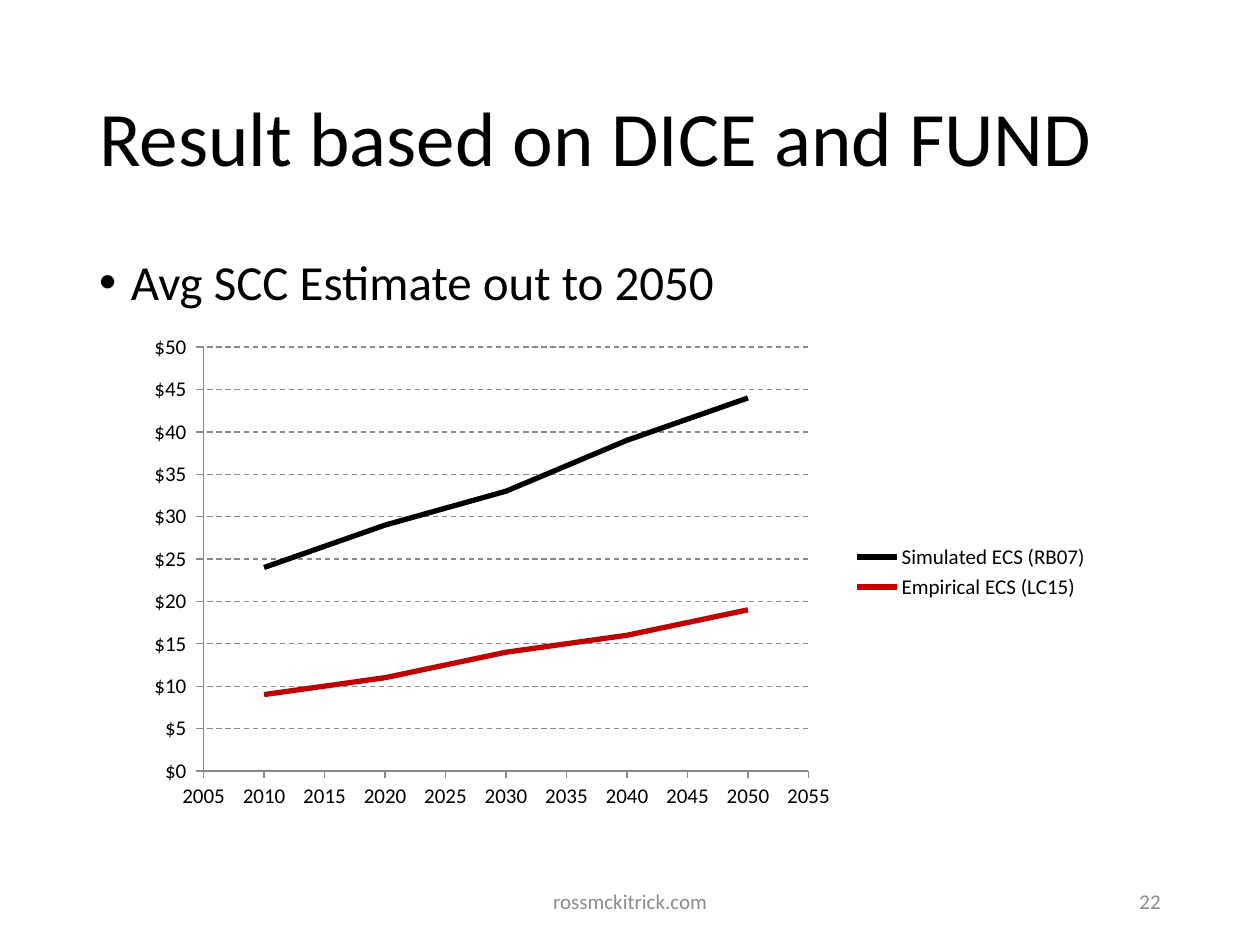
from lxml import etree
from pptx import Presentation, util as u
from pptx.chart.data import XyChartData
from pptx.dml.color import RGBColor
from pptx.enum import chart as ch, dml, text
from pptx.oxml.ns import qn

COLORS = {"text": "000000", "footer": "8C8C8C", "axis": "898989",
          "simulated": "000000", "empirical": "C00000"}
FONT = "Calibri"
TITLE = "Result based on DICE and FUND"
BULLET = "Avg SCC Estimate out to 2050"
# text, (left, top, width, height) in cm, alignment
FOOTERS = [
    ("rossmckitrick.com", (8.41, 17.65, 8.59, 1.02), text.PP_ALIGN.CENTER),
    ("22", (17.93, 17.65, 5.72, 1.02), text.PP_ALIGN.RIGHT),
]
YEARS = [2010, 2020, 2030, 2040, 2050]
SERIES = [
    ("Simulated ECS (RB07)", [24, 29, 33, 39, 44], "simulated"),
    ("Empirical ECS (LC15)", [9, 11, 14, 16, 19], "empirical"),
]
DOLLARS = '"$"#,##0_);[Red]\\("$"#,##0\\)'
TITLE_BOX = (1.75, 1.02, 21.9, 3.68)
BODY_BOX = (1.75, 5.08, 21.9, 12.09)
CHART_BOX = (2.74, 6.55, 19.48, 9.96)
PLOT_AREA = {"x": 0.07, "y": 0.045, "w": 0.626, "h": 0.858}


def lengths(box):
    return [u.Cm(value) for value in box]


def color(name):
    return RGBColor.from_string(COLORS[name])


def write(shape, content, size, fill="text", align=text.PP_ALIGN.LEFT,
          anchor=text.MSO_ANCHOR.MIDDLE, spacing=1.0):
    frame = shape.text_frame
    frame.word_wrap = True
    frame.auto_size = text.MSO_AUTO_SIZE.NONE
    frame.vertical_anchor = anchor
    paragraph = frame.paragraphs[0]
    paragraph.alignment = align
    paragraph.line_spacing = spacing
    run = paragraph.add_run()
    run.text = content
    run.font.name, run.font.size = FONT, u.Pt(size)
    run.font.color.rgb = color(fill)
    return paragraph


def add_bullet(paragraph, indent):
    properties = paragraph._p.get_or_add_pPr()
    properties.set("marL", str(indent))
    properties.set("indent", str(-indent))
    etree.SubElement(properties, qn("a:buFont")).set("typeface", "Arial")
    etree.SubElement(properties, qn("a:buChar")).set("char", "•")


def format_axis(axis, low, high, number_format):
    axis.minimum_scale, axis.maximum_scale, axis.major_unit = low, high, 5
    axis.major_tick_mark = ch.XL_TICK_MARK.OUTSIDE
    axis.minor_tick_mark = ch.XL_TICK_MARK.NONE
    axis.has_major_gridlines = False
    axis.format.line.color.rgb = color("axis")
    axis.format.line.width = u.Pt(0.75)
    labels = axis.tick_labels
    labels.number_format, labels.number_format_is_linked = number_format, False
    labels.font.size = u.Pt(12)


def place_plot_area(chart):
    """Fix the inner plot area as fractions of the chart."""
    plot_area = chart._chartSpace.chart.plotArea
    for old in plot_area.findall(qn("c:layout")):
        plot_area.remove(old)
    layout = etree.Element(qn("c:layout"))
    manual = etree.SubElement(layout, qn("c:manualLayout"))
    settings = [("layoutTarget", "inner"), ("xMode", "edge"), ("yMode", "edge")]
    for tag, value in settings + list(PLOT_AREA.items()):
        etree.SubElement(manual, qn(f"c:{tag}")).set("val", str(value))
    plot_area.insert(0, layout)


def add_estimate_chart(slide):
    data = XyChartData()
    for name, values, _ in SERIES:
        series = data.add_series(name)
        for year, value in zip(YEARS, values):
            series.add_data_point(year, value)
    chart = slide.shapes.add_chart(
        ch.XL_CHART_TYPE.XY_SCATTER_SMOOTH_NO_MARKERS, *lengths(CHART_BOX), data).chart
    chart.has_title = False
    chart.font.name, chart.font.size = FONT, u.Pt(10)
    chart.font.color.rgb = color("text")
    chart.plots[0].vary_by_categories = False
    for series, (_, _, line_color) in zip(chart.plots[0].series, SERIES):
        series.smooth = True
        series.marker.style = ch.XL_MARKER_STYLE.NONE
        series.format.line.color.rgb = color(line_color)
        series.format.line.width = u.Pt(3)

    format_axis(chart.category_axis, 2005, 2055, "General")
    format_axis(chart.value_axis, 0, 50, DOLLARS)
    chart.value_axis.has_major_gridlines = True
    grid = chart.value_axis.major_gridlines.format.line
    grid.color.rgb, grid.width = color("axis"), u.Pt(0.75)
    grid.dash_style = dml.MSO_LINE.DASH

    chart.has_legend = True
    chart.legend.position = ch.XL_LEGEND_POSITION.RIGHT
    chart.legend.include_in_layout = False
    chart.legend.font.size = u.Pt(12)
    place_plot_area(chart)


def main():
    presentation = Presentation()
    presentation.slide_width, presentation.slide_height = u.Cm(25.4), u.Cm(19.05)
    slide = presentation.slides.add_slide(presentation.slide_layouts[5])
    title = slide.shapes.title
    title.left, title.top, title.width, title.height = lengths(TITLE_BOX)
    write(title, TITLE, 44, spacing=0.9)

    body = slide.shapes.add_textbox(*lengths(BODY_BOX))
    bullet = write(body, BULLET, 28, anchor=text.MSO_ANCHOR.TOP, spacing=0.9)
    bullet.space_before = u.Pt(10)
    add_bullet(bullet, u.Cm(0.64))

    for content, box, align in FOOTERS:
        write(slide.shapes.add_textbox(*lengths(box)), content, 12,
              fill="footer", align=align)
    add_estimate_chart(slide)
    presentation.save("out.pptx")


if __name__ == "__main__":
    main()
